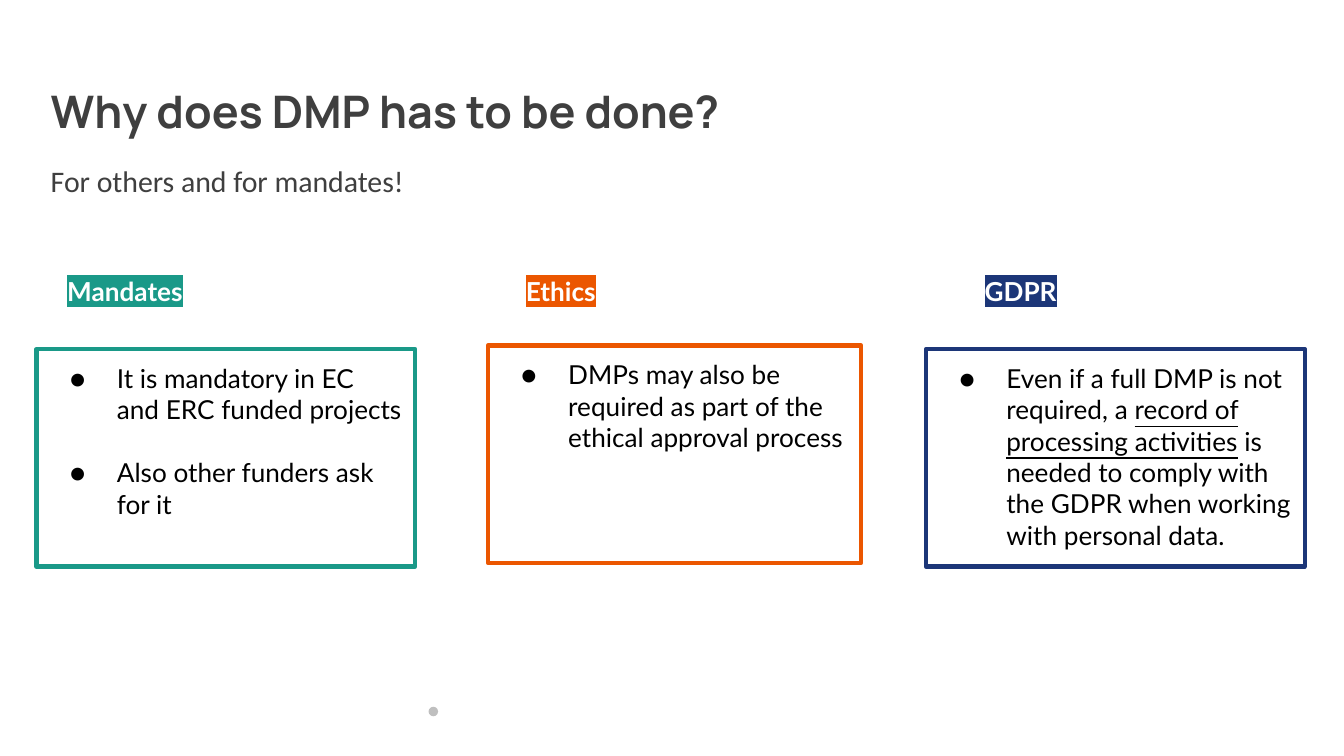
from lxml import etree
from pptx import Presentation, util as u
from pptx.dml.color import RGBColor
from pptx.enum import shapes, text
from pptx.oxml.ns import qn

GREY, BLACK, WHITE, DOT = "3F3F3F", "000000", "FFFFFF", "BFBFBF"

TITLE = "Why does DMP has to be done?"
SUBTITLE = "For others and for mandates!"
# Each bullet is a list of (words, underlined) pieces; card is left, top, width in cm
COLUMNS = [
    {"heading": "Mandates", "colour": "1A9988", "card": (0.69, 6.6, 7.16),
     "bullets": [[("It is mandatory in EC and ERC funded projects", False)],
                 [("Also other funders ask for it", False)]]},
    {"heading": "Ethics", "colour": "EB5600", "card": (9.22, 6.53, 7.06),
     "bullets": [[("DMPs may also be required as part of the ethical approval process", False)]]},
    {"heading": "GDPR", "colour": "1C3678", "card": (17.5, 6.6, 7.16),
     "bullets": [[("Even if a full DMP is not required, a ", False),
                  ("record of processing activities", True),
                  (" is needed to comply with the GDPR when working with personal data.", False)]]},
]
HEADING_LEFT, HEADING_STEP, HEADING_TOP = 1.02, 8.67, 4.95
CARD_HEIGHT = 4.11
INDENT, HANGING = 1.27, 0.89


def rgb(colour):
    return RGBColor.from_string(colour)


def set_all(target, values):
    for name, value in values.items():
        setattr(target, name, value)


def set_frame(shape, anchor=text.MSO_ANCHOR.TOP, vertical=0.25):
    frame = shape.text_frame
    set_all(frame, {"word_wrap": True, "vertical_anchor": anchor,
                    "margin_left": u.Cm(0.25), "margin_right": u.Cm(0.25),
                    "margin_top": u.Cm(vertical), "margin_bottom": u.Cm(vertical)})
    return frame


def add_run(paragraph, words, colour, **font):
    run = paragraph.add_run()
    run.text = words
    set_all(run.font, font)
    run.font.color.rgb = rgb(colour)
    return run


def add_text(slide, box, **frame_format):
    """Add a text box and return its first paragraph."""
    shape = slide.shapes.add_textbox(*map(u.Cm, box))
    return set_frame(shape, **frame_format).paragraphs[0]


def add_colour(parent, tag, colour):
    element = etree.SubElement(parent, qn(tag))
    etree.SubElement(element, qn("a:srgbClr"), val=colour)
    return element


def add_bullet(paragraph):
    properties = paragraph._p.get_or_add_pPr()
    properties.set("marL", str(u.Cm(INDENT)))
    properties.set("indent", str(-u.Cm(HANGING)))
    add_colour(properties, "a:buClr", BLACK)
    etree.SubElement(properties, qn("a:buFont"), typeface="Lato")
    etree.SubElement(properties, qn("a:buChar"), char="●")


def add_heading(slide, words, colour, left):
    paragraph = add_text(slide, (left, HEADING_TOP, 6.48, 1.12))
    run = add_run(paragraph, words, WHITE, size=u.Pt(14), name="Lato", bold=True)
    highlight = add_colour(run._r.rPr, "a:highlight", colour)
    run._r.rPr.find(qn("a:solidFill")).addnext(highlight)


def add_card(slide, box, colour, bullets):
    card = slide.shapes.add_shape(shapes.MSO_SHAPE.RECTANGLE, *map(u.Cm, box))
    card.shadow.inherit = False
    card.fill.background()
    card.line.color.rgb = rgb(colour)
    card.line.width = u.Pt(2.25)
    frame = set_frame(card)
    for index, pieces in enumerate(bullets):
        paragraph = frame.add_paragraph() if index else frame.paragraphs[0]
        add_bullet(paragraph)
        set_all(paragraph, {"alignment": text.PP_ALIGN.LEFT,
                            "space_before": u.Pt(17 if index else 0)})
        for words, underlined in pieces:
            add_run(paragraph, words, BLACK, size=u.Pt(14), name="Lato", underline=underlined)


def main():
    presentation = Presentation()
    set_all(presentation, {"slide_width": u.Cm(25.4), "slide_height": u.Cm(14.29)})
    slide = presentation.slides.add_slide(presentation.slide_layouts[6])

    dot = slide.shapes.add_shape(shapes.MSO_SHAPE.OVAL, *map(u.Cm, (8.1, 13.36, 0.18, 0.18)))
    dot.shadow.inherit = False
    dot.fill.solid()
    dot.fill.fore_color.rgb = rgb(DOT)
    dot.line.fill.background()

    subtitle = add_text(slide, (0.71, 3.02, 24, 2.34), vertical=0.13)
    set_all(subtitle, {"alignment": text.PP_ALIGN.JUSTIFY, "line_spacing": 0.9,
                       "space_after": u.Pt(12)})
    add_run(subtitle, SUBTITLE, GREY, size=u.Pt(16), name="Calibri")

    title = add_text(slide, (0.71, 1.35, 24, 1.6), anchor=text.MSO_ANCHOR.MIDDLE, vertical=0.13)
    title.line_spacing = 0.9
    add_run(title, TITLE, GREY, size=u.Pt(24), name="Manrope", bold=True)

    for index, column in enumerate(COLUMNS):
        add_card(slide, (*column["card"], CARD_HEIGHT), column["colour"], column["bullets"])
        add_heading(slide, column["heading"], column["colour"],
                    HEADING_LEFT + index * HEADING_STEP)

    presentation.save("out.pptx")


if __name__ == "__main__":
    main()
